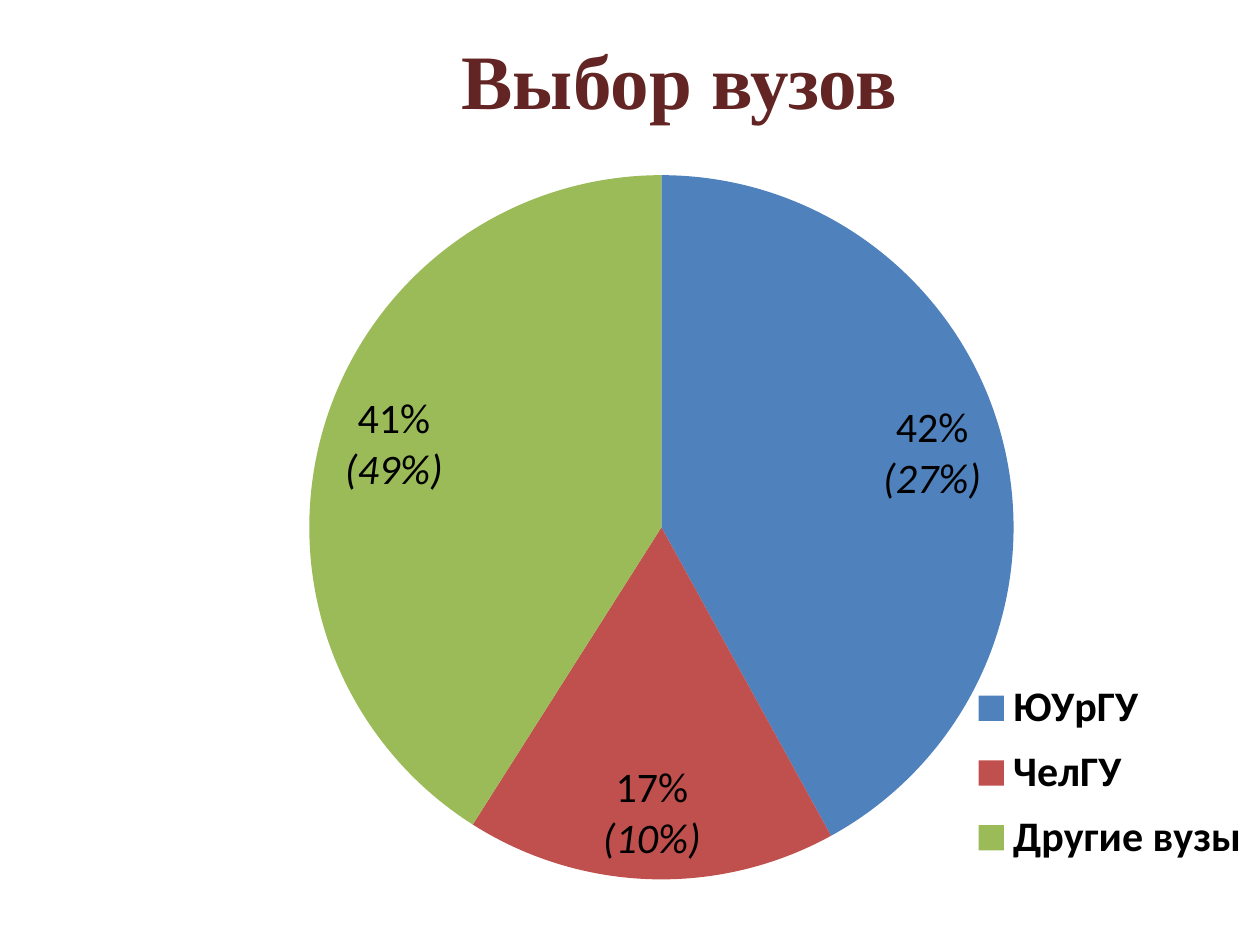
from lxml.etree import SubElement
from pptx import Presentation
from pptx.chart.data import CategoryChartData
from pptx.dml.color import RGBColor
from pptx.enum.chart import XL_CHART_TYPE as ChartType
from pptx.enum.chart import XL_LABEL_POSITION as LabelPos
from pptx.enum.chart import XL_LEGEND_POSITION as LegendPos
from pptx.enum.text import MSO_ANCHOR as Anchor
from pptx.enum.text import PP_ALIGN as Align
from pptx.oxml.ns import qn
from pptx.util import Inches, Pt

# Content: university, share, share in brackets, slice colour
TITLE = "Выбор вузов"
SHARES = [
    ("ЮУрГУ", 0.42, "(27%)", "4F81BD"),
    ("ЧелГУ", 0.17, "(10%)", "C0504D"),
    ("Другие вузы", 0.41, "(49%)", "9BBB59"),
]
THEME = {
    "title_font": "Times New Roman", "title_color": "632523", "title_size": 44,
    "chart_font": "Calibri", "chart_color": "000000", "chart_size": 24,
}
# Inches: the chart on the slide, then its parts inside it (x, y, width, height)
CHART_AREA = (1.14, 1.39, 8.86, 5.59)
PIE_AREA = (0.58, 0, 7.06, 5.59)
LEGEND_AREA = (6.52, 3.92, 2.3, 1.65)


def style(font, name, size, color, bold=False, italic=False):
    font.name, font.size = name, Pt(size)
    font.bold, font.italic = bold, italic
    font.color.rgb = RGBColor.from_string(color)


def add_text(paragraph, text, **fmt):
    run = paragraph.add_run()
    run.text = text
    style(run.font, **fmt)


def make_layout(parent, position, area, inner=False):
    """Place a chart part by hand, as the child at the given position."""
    for old in parent.findall(qn("c:layout")):
        parent.remove(old)
    layout = SubElement(parent, qn("c:layout"))
    parent.insert(position, layout)
    manual = SubElement(layout, qn("c:manualLayout"))
    settings = [("layoutTarget", "inner")] if inner else []
    settings += [("xMode", "edge"), ("yMode", "edge")]
    chart_size = CHART_AREA[2:] * 2
    settings += [(tag, part / whole)
                 for tag, part, whole in zip("xywh", area, chart_size)]
    for tag, value in settings:
        SubElement(manual, qn(f"c:{tag}")).set("val", str(value))


prs = Presentation()
prs.slide_width, prs.slide_height = Inches(10), Inches(7.5)
slide = prs.slides.add_slide(prs.slide_layouts[6])

# Title
heading = slide.shapes.add_textbox(
    Inches(2.48), 0, Inches(5.83), Inches(1.25)).text_frame
heading.word_wrap = True
heading.vertical_anchor = Anchor.MIDDLE
heading.paragraphs[0].alignment = Align.CENTER
add_text(heading.paragraphs[0], TITLE, name=THEME["title_font"],
         size=THEME["title_size"], color=THEME["title_color"], bold=True)

# Pie chart
data = CategoryChartData(number_format="0%")
data.categories = [university for university, *_ in SHARES]
data.add_series("Series 1", [share for _, share, *_ in SHARES])
chart = slide.shapes.add_chart(
    ChartType.PIE, *map(Inches, CHART_AREA), data).chart
chart.has_title = False
chart_text = {"name": THEME["chart_font"], "size": THEME["chart_size"],
              "color": THEME["chart_color"]}
style(chart.font, **chart_text)
pie = chart.plots[0]
pie.vary_by_categories = True
make_layout(chart._chartSpace.chart.plotArea, 0, PIE_AREA, inner=True)

# Slices with two-line labels
shares = pie.series[0]
share_labels = shares.data_labels
share_labels.show_value = True
share_labels.show_percentage = False
share_labels.number_format = "0%"
share_labels.number_format_is_linked = False
style(share_labels.font, bold=True, **chart_text)
for index, (_, share, bracketed, color) in enumerate(SHARES):
    wedge = shares.points[index]
    wedge.format.fill.solid()
    wedge.format.fill.fore_color.rgb = RGBColor.from_string(color)
    wedge.format.line.fill.background()
    label = wedge.data_label
    lines = label.text_frame
    add_text(lines.paragraphs[0], f"{share:.0%}", **chart_text)
    add_text(lines.add_paragraph(), bracketed, italic=True, **chart_text)
    label.position = LabelPos.BEST_FIT

# Legend
chart.has_legend = True
legend = chart.legend
legend.position = LegendPos.RIGHT
legend.include_in_layout = False
style(legend.font, bold=True, **chart_text)
make_layout(legend._element, 1, LEGEND_AREA)

prs.save("out.pptx")
